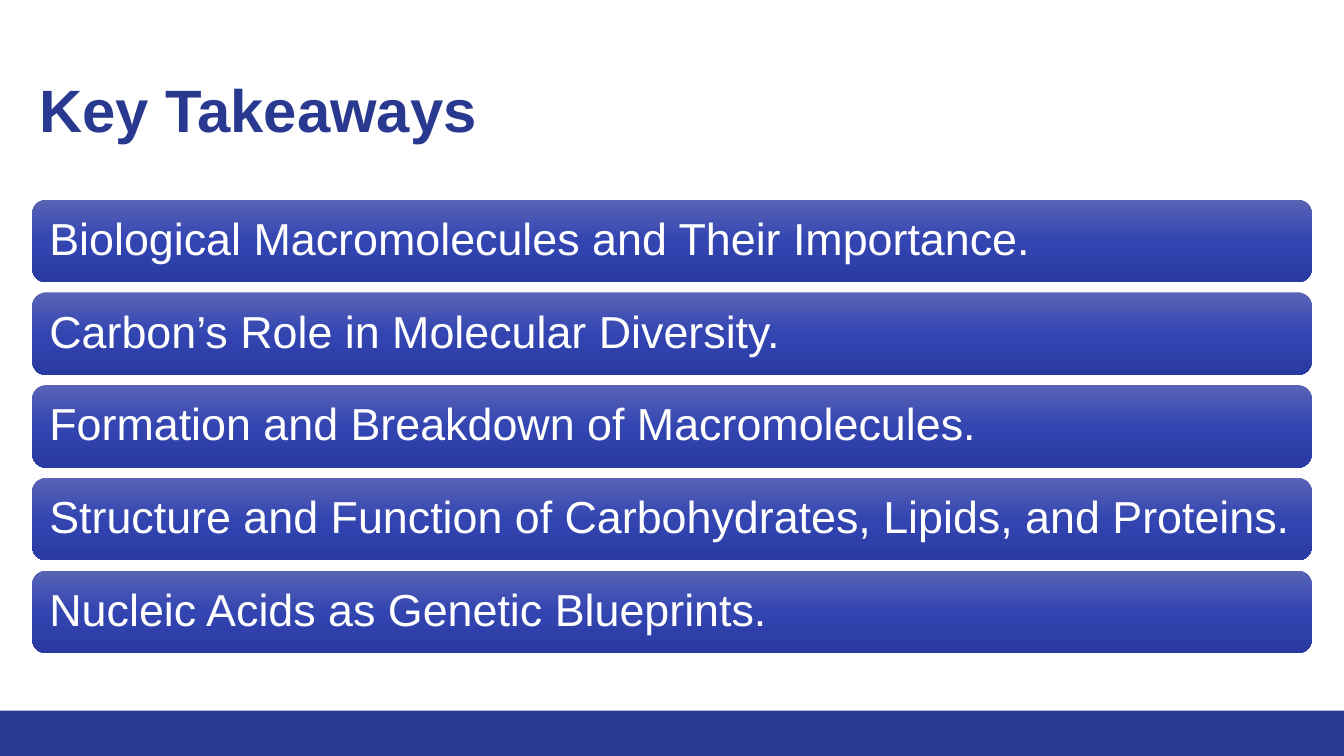
from copy import deepcopy

from pptx import Presentation
from pptx.dml.color import RGBColor
from pptx.enum.shapes import MSO_SHAPE
from pptx.enum.text import MSO_ANCHOR, PP_ALIGN
from pptx.oxml.ns import qn
from pptx.util import Inches, Pt

RECTANGLE = MSO_SHAPE.RECTANGLE
ROUNDED = MSO_SHAPE.ROUNDED_RECTANGLE
MIDDLE = MSO_ANCHOR.MIDDLE
LEFT = PP_ALIGN.LEFT

FONT = "Arial"
NAVY = "2A3990"
WHITE = "FFFFFF"
BAR_GRADIENT = [(0, "5963B6"), (0.5, "3345B1"), (1, "293AA2")]
TAKEAWAYS = [
    "Biological Macromolecules and Their Importance.",
    "Carbon’s Role in Molecular Diversity.",
    "Formation and Breakdown of Macromolecules.",
    "Structure and Function of Carbohydrates, Lipids, and Proteins.",
    "Nucleic Acids as Genetic Blueprints.",
]


def color(value):
    """Turn a hex string into a colour."""
    return RGBColor.from_string(value)


def add_block(page, kind, left, top, width, height):
    """Add a preset shape without shadow or outline."""
    block = page.shapes.add_shape(
        kind, Inches(left), Inches(top), Inches(width), Inches(height))
    block.shadow.inherit = False
    block.line.fill.background()
    return block


def fill_gradient(shape, stops):
    """Fill a shape with a gradient running from top to bottom."""
    shape.fill.gradient()
    shape.fill.gradient_angle = 270
    stop_list = next(shape.element.iter(qn("a:gsLst")))
    while len(stop_list) < len(stops):
        stop_list.append(deepcopy(stop_list[0]))
    for stop, (position, value) in zip(shape.fill.gradient_stops, stops):
        stop.position = position
        stop.color.rgb = color(value)


def write_text(shape, text, size, value, bold=False):
    """Write one left-aligned, vertically centred paragraph."""
    frame = shape.text_frame
    frame.text = text
    frame.word_wrap = True
    frame.vertical_anchor = MIDDLE
    para = frame.paragraphs[0]
    para.alignment = LEFT
    para.line_spacing = 0.9
    font = para.runs[0].font
    font.name = FONT
    font.size = Pt(size)
    font.bold = bold
    font.color.rgb = color(value)


def add_footer(page, left, top, width, height):
    """Draw the solid band along the bottom edge."""
    band = add_block(page, RECTANGLE, left, top, width, height)
    band.fill.solid()
    band.fill.fore_color.rgb = color(NAVY)


def add_title(page, left, top, width, height):
    """Place the slide heading."""
    box = page.shapes.add_textbox(
        Inches(left), Inches(top), Inches(width), Inches(height))
    write_text(box, "Key Takeaways", 42.7, NAVY, bold=True)


def add_takeaways(page, left, top, width, height):
    """Stack the takeaway bars evenly within the given box."""
    bar_height = 0.82
    pitch = (height - bar_height) / (len(TAKEAWAYS) - 1)
    for index, takeaway in enumerate(TAKEAWAYS):
        bar = add_block(
            page, ROUNDED, left, top + index * pitch, width, bar_height)
        fill_gradient(bar, BAR_GRADIENT)
        frame = bar.text_frame
        frame.margin_left = frame.margin_right = Inches(0.13)
        frame.margin_top = frame.margin_bottom = Inches(0.13)
        write_text(bar, takeaway, 32, WHITE)


def main():
    """Build and save the slide."""
    deck = Presentation()
    deck.slide_width = Inches(13.33)
    deck.slide_height = Inches(7.5)
    page = deck.slides.add_slide(deck.slide_layouts[6])
    add_footer(page, 0, 7.05, 13.33, 0.45)
    add_title(page, 0.29, 0.4, 12.69, 1.45)
    add_takeaways(page, 0.32, 1.98, 12.69, 4.5)
    deck.save("out.pptx")


if __name__ == "__main__":
    main()
